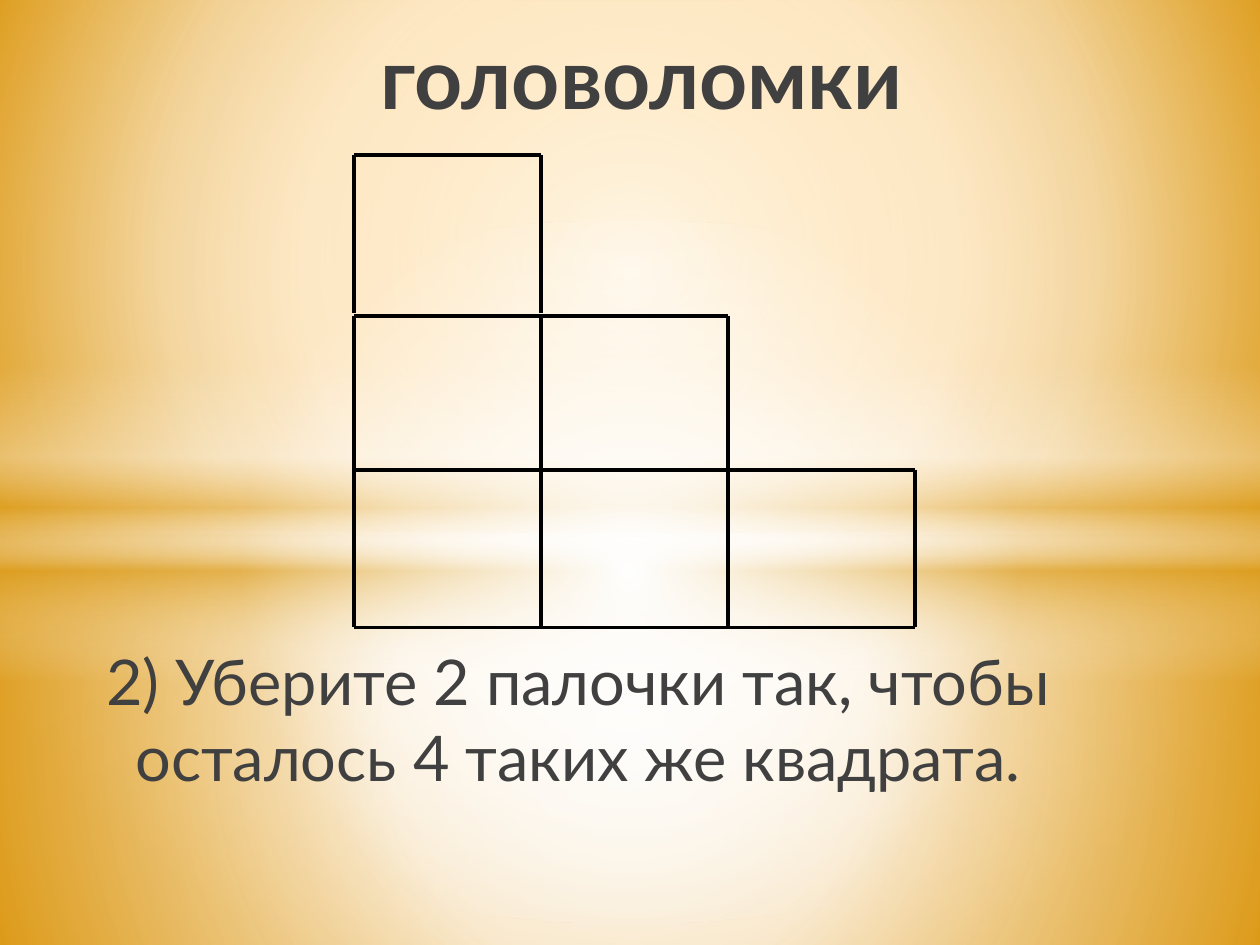
from dataclasses import dataclass

from lxml import etree
from pptx import Presentation
from pptx.dml.color import RGBColor
from pptx.enum.shapes import MSO_CONNECTOR, MSO_SHAPE
from pptx.enum.text import MSO_ANCHOR, PP_ALIGN
from pptx.oxml.ns import qn
from pptx.util import Cm, Pt

RECTANGLE, OVAL = MSO_SHAPE.RECTANGLE, MSO_SHAPE.OVAL
STRAIGHT = MSO_CONNECTOR.STRAIGHT
TOP, BOTTOM = MSO_ANCHOR.TOP, MSO_ANCHOR.BOTTOM
CENTER = PP_ALIGN.CENTER


@dataclass(frozen=True)
class Theme:
    font: str = "Lato"
    text: RGBColor = RGBColor(0x40, 0x40, 0x40)
    stick: RGBColor = RGBColor(0, 0, 0)
    white: str = "FFFFFF"
    gold: str = "DC9E1F"
    title_size: int = 48
    task_size: int = 36
    stick_width: float = 2.25


THEME = Theme()
MIDDLE = (50, 50, 50, 50)
PAGE_WIDTH, PAGE_HEIGHT = 25.4, 19.05


def apply_gradient(fill, owner, stops, focus=None):
    """Fill with (position, colour, opacity) stops: round about focus, else downwards."""
    fill.solid()
    solid = next(owner.iter(qn("a:solidFill")))
    gradient = etree.Element(qn("a:gradFill"), rotWithShape="1")
    stop_list = etree.SubElement(gradient, qn("a:gsLst"))
    for position, colour, opacity in stops:
        stop = etree.SubElement(stop_list, qn("a:gs"), pos=str(position * 1000))
        tint = etree.SubElement(stop, qn("a:srgbClr"), val=colour)
        if opacity < 100:
            etree.SubElement(tint, qn("a:alpha"), val=str(opacity * 1000))
    if focus:
        circle = etree.SubElement(gradient, qn("a:path"), path="circle")
        sides = {side: str(part * 1000) for side, part in zip("ltrb", focus)}
        etree.SubElement(circle, qn("a:fillToRect"), **sides)
    else:
        etree.SubElement(gradient, qn("a:lin"), ang="5400000", scaled="0")
    solid.getparent().replace(solid, gradient)


def add_glow(page, kind, top, height, stops, focus=None):
    """Add a full-width shape with a translucent gradient."""
    shape = page.shapes.add_shape(kind, 0, Cm(top), Cm(PAGE_WIDTH), Cm(height))
    shape.shadow.inherit = False
    shape.line.fill.background()
    apply_gradient(shape.fill, shape.element.spPr, stops, focus)


def add_backdrop(page):
    white, gold = THEME.white, THEME.gold
    base = [(0, "FFA607", 100), (60, "F9CD88", 100), (100, "E08E02", 100)]
    apply_gradient(page.background.fill, page.element, base, (20, 10, 20, 60))

    horizon = 10.75
    lower = [(0, white, 92), (37, white, 77), (100, gold, 80)]
    upper = [(0, white, 90), (48, white, 63), (100, gold, 80)]
    band = [(0, white, 0), (29, white, 30), (45, gold, 40),
            (55, white, 26), (65, gold, 60), (100, white, 0)]
    halo = [(0, white, 100), (54, white, 0)]
    add_glow(page, RECTANGLE, horizon, PAGE_HEIGHT - horizon, lower, MIDDLE)
    add_glow(page, RECTANGLE, 0, horizon, upper, MIDDLE)
    add_glow(page, RECTANGLE, 7.37, 6.35, band)
    add_glow(page, OVAL, 4.45, 14.17, halo, MIDDLE)


def add_text(page, left, top, width, height, text, size, anchor, bold=False):
    box = page.shapes.add_textbox(Cm(left), Cm(top), Cm(width), Cm(height))
    frame = box.text_frame
    frame.word_wrap = True
    frame.vertical_anchor = anchor
    para = frame.paragraphs[0]
    para.alignment = CENTER
    span = para.add_run()
    span.text = text
    span.font.name = THEME.font
    span.font.size = Pt(size)
    span.font.bold = bold
    span.font.color.rgb = THEME.text


def add_stick(page, x1, y1, x2, y2):
    stick = page.shapes.add_connector(STRAIGHT, Cm(x1), Cm(y1), Cm(x2), Cm(y2))
    stick.line.color.rgb = THEME.stick
    stick.line.width = Pt(THEME.stick_width)
    etree.SubElement(stick.element.spPr, qn("a:effectLst"))


def add_staircase(page, left, top):
    """Lay sticks as rows of one, two and three cells."""
    across, down = 3.77, 3.18
    levels = (0, 3.25, 6.35, 9.53)
    cells_above = (1, 2, 3, 3)
    for row, (level, cells) in enumerate(zip(levels, cells_above)):
        y = top + level
        for column in range(cells):
            x = left + column * across
            add_stick(page, x, y, x + across, y)
        if row < len(levels) - 1:
            for column in range(cells + 1):
                x = left + column * across
                add_stick(page, x, y, x, y + down)


def build_puzzle_slide(deck):
    page = deck.slides.add_slide(deck.slide_layouts[6])
    add_backdrop(page)
    add_text(page, 3.5, 0.33, 18.87, 2.34, "головоломки",
             THEME.title_size, BOTTOM, bold=True)
    add_staircase(page, 7.14, 3.12)
    add_text(page, 0.75, 12.83, 21.8, 3.4,
             "2) Уберите 2 палочки так, чтобы осталось 4 таких же квадрата.",
             THEME.task_size, TOP)


def main():
    deck = Presentation()
    deck.slide_width, deck.slide_height = Cm(PAGE_WIDTH), Cm(PAGE_HEIGHT)
    build_puzzle_slide(deck)
    deck.save("out.pptx")


if __name__ == "__main__":
    main()
